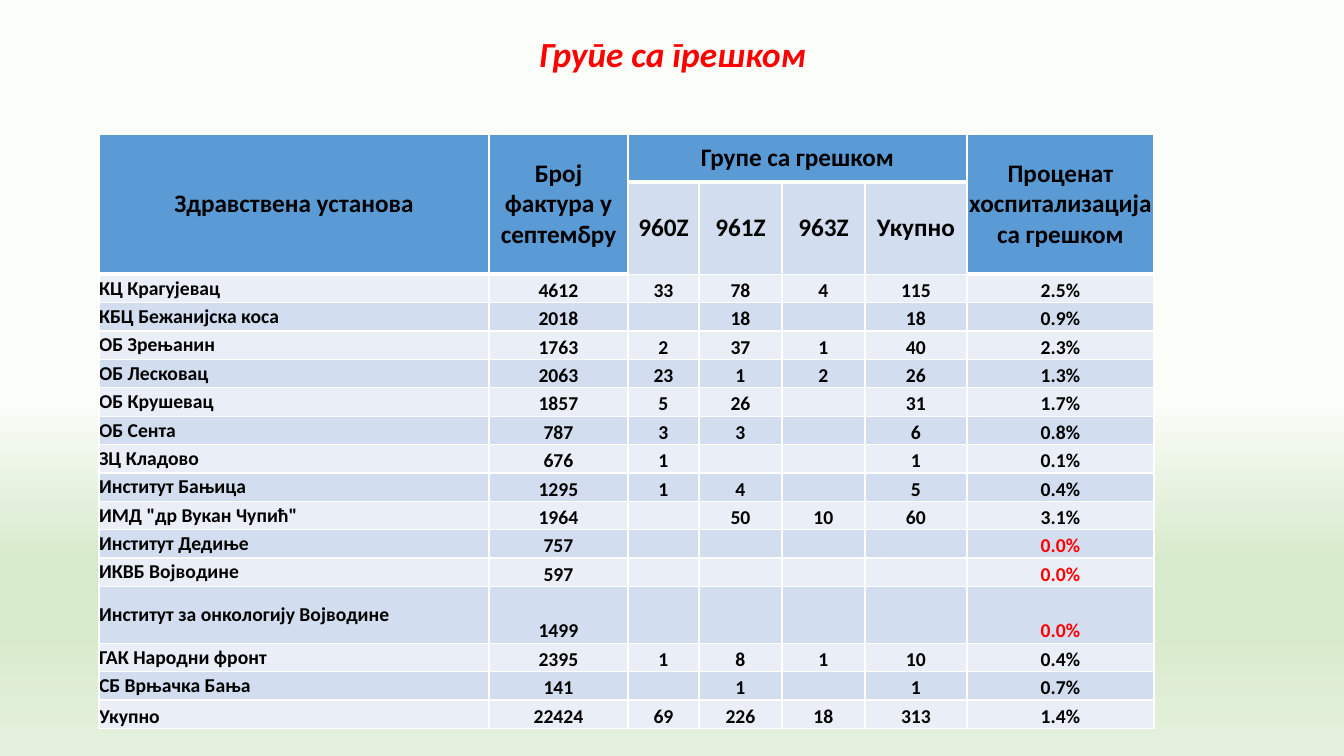
from lxml.etree import SubElement
from pptx import Presentation
from pptx.dml.color import RGBColor
from pptx.enum.text import MSO_ANCHOR, PP_ALIGN
from pptx.oxml.ns import qn
from pptx.util import Pt

EMU_PER_PX = 914400 / 100.8
COLORS = {
    "red": "FF0000", "black": "000000", "white": "FFFFFF", "header": "5B9BD5",
    "light": "EAEFF7", "dark": "D2DEEF", "sky": "FBFDF9", "grass": "D8EACC", "ground": "E5F1DD",
}
BACKGROUND_STOPS = [(53, "sky"), (74, "grass"), (83, "grass"), (100, "ground")]
COLUMN_WIDTHS = [390, 139, 71, 83, 83, 102, 187]
HEADER_HEIGHTS = [48, 56]
BODY_HEIGHT = 454
TALL_ROW = "Институт за онкологију Војводине"
HEADERS = [
    ["Здравствена установа", "Број фактура у септембру", "Групе са грешком", "", "", "",
     "Проценат хоспитализација са грешком"],
    ["", "", "960Z", "961Z", "963Z", "Укупно", ""],
]
INSTITUTIONS = [
    ["КЦ Крагујевац", "4612", "33", "78", "4", "115", "2.5%"],
    ["КБЦ Бежанијска коса", "2018", "", "18", "", "18", "0.9%"],
    ["ОБ Зрењанин", "1763", "2", "37", "1", "40", "2.3%"],
    ["ОБ Лесковац", "2063", "23", "1", "2", "26", "1.3%"],
    ["ОБ Крушевац", "1857", "5", "26", "", "31", "1.7%"],
    ["ОБ Сента", "787", "3", "3", "", "6", "0.8%"],
    ["ЗЦ Кладово", "676", "1", "", "", "1", "0.1%"],
    ["Институт Бањица", "1295", "1", "4", "", "5", "0.4%"],
    ["ИМД \"др Вукан Чупић\"", "1964", "", "50", "10", "60", "3.1%"],
    ["Институт Дедиње", "757", "", "", "", "", "0.0%"],
    ["ИКВБ Војводине", "597", "", "", "", "", "0.0%"],
    [TALL_ROW, "1499", "", "", "", "", "0.0%"],
    ["ГАК Народни фронт", "2395", "1", "8", "1", "10", "0.4%"],
    ["СБ Врњачка Бања", "141", "", "1", "", "1", "0.7%"],
    ["Укупно", "22424", "69", "226", "18", "313", "1.4%"],
]


def px(value):
    return round(value * EMU_PER_PX)


def write_text(paragraph, text, color, **font_format):
    run = paragraph.add_run()
    run.text = text
    run._r.get_or_add_rPr().set("lang", "sr-Cyrl-RS")
    run.font.color.rgb = RGBColor.from_string(COLORS[color])
    for name, value in {"name": "Calibri", "bold": True, **font_format}.items():
        setattr(run.font, name, value)


presentation = Presentation()
presentation.slide_width, presentation.slide_height = px(1344), px(756)
slide = presentation.slides.add_slide(presentation.slide_layouts[5])

background = slide.background.fill
background.gradient()
background.gradient_angle = 270
stop_list = next(slide._element.iter(qn("a:gsLst")))
for stop in list(stop_list):
    stop_list.remove(stop)
for position, color in BACKGROUND_STOPS:
    stop = SubElement(stop_list, qn("a:gs"), pos=str(position * 1000))
    SubElement(stop, qn("a:srgbClr"), val=COLORS[color])

title = slide.shapes.title
title.left, title.top, title.width, title.height = px(93), px(37), px(1159), px(97)
title_format = {"vertical_anchor": MSO_ANCHOR.TOP, "margin_top": 0, "margin_bottom": 0, "word_wrap": True}
for name, value in title_format.items():
    setattr(title.text_frame, name, value)
title_paragraph = title.text_frame.paragraphs[0]
title_paragraph.alignment = PP_ALIGN.CENTER
title_paragraph.line_spacing = 0.9
write_text(title_paragraph, "Групе са грешком", "red", size=Pt(25.2), italic=True)

rows = HEADERS + INSTITUTIONS
table = slide.shapes.add_table(
    len(rows), len(COLUMN_WIDTHS), px(99), px(134), px(sum(COLUMN_WIDTHS)), px(sum(HEADER_HEIGHTS) + BODY_HEIGHT)
).table
for column, width in zip(table.columns, COLUMN_WIDTHS):
    column.width = px(width)
row_unit = px(BODY_HEIGHT) // (len(INSTITUTIONS) + 1)
for row_index, values in enumerate(rows):
    is_header = row_index < len(HEADERS)
    if is_header:
        table.rows[row_index].height = px(HEADER_HEIGHTS[row_index])
    else:
        table.rows[row_index].height = row_unit * (2 if values[0] == TALL_ROW else 1)
    for column_index, text in enumerate(values):
        cell = table.cell(row_index, column_index)
        is_blue = row_index == 0 or (row_index == 1 and column_index in (0, 1, 6))
        is_name = column_index == 0 and not is_header
        is_middle = is_header or (is_name and row_index < len(rows) - 1)
        cell.vertical_anchor = MSO_ANCHOR.MIDDLE if is_middle else MSO_ANCHOR.BOTTOM
        for side in ("left", "right", "top", "bottom"):
            setattr(cell, f"margin_{side}", 0)
        for edge in ("lnL", "lnR", "lnT", "lnB"):
            width = Pt(3 if is_blue and edge == "lnB" else 1)
            line = SubElement(cell._tc.get_or_add_tcPr(), qn(f"a:{edge}"), w=str(width))
            SubElement(SubElement(line, qn("a:solidFill")), qn("a:srgbClr"), val=COLORS["white"])
        cell.fill.solid()
        fill_name = "header" if is_blue else "dark" if row_index % 2 else "light"
        cell.fill.fore_color.rgb = RGBColor.from_string(COLORS[fill_name])
        paragraph = cell.text_frame.paragraphs[0]
        paragraph.alignment = PP_ALIGN.LEFT if is_name else PP_ALIGN.CENTER
        if text:
            write_text(paragraph, text, "red" if text == "0.0%" else "black", size=Pt(18 if is_header else 14))
        else:
            SubElement(paragraph._p, qn("a:endParaRPr"), sz="1400")

for column_index in (0, 1, 6):
    table.cell(0, column_index).merge(table.cell(1, column_index))
table.cell(0, 2).merge(table.cell(0, 5))

presentation.save("out.pptx")
